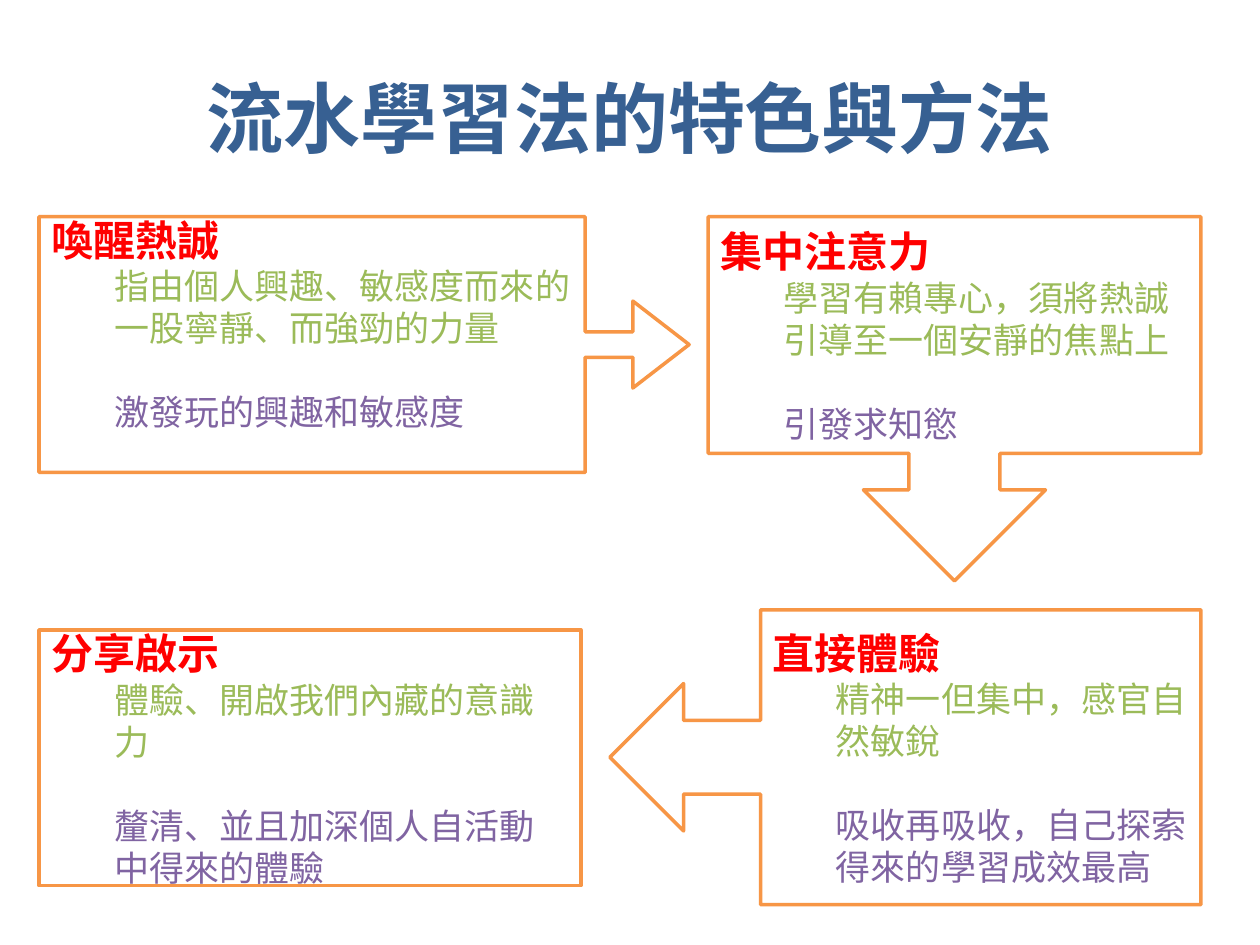
import pptx
import pptx.util
import pptx.dml.color
import pptx.enum.shapes
import pptx.enum.text
import pptx.oxml.ns
import lxml.etree

Inches = pptx.util.Inches
Pt = pptx.util.Pt
MSO = pptx.enum.shapes.MSO_SHAPE
PP_ALIGN = pptx.enum.text.PP_ALIGN
FONT = "Noto Sans CJK SC"
COLORS = {
    "title": "376092",
    "heading": "FF0000",
    "feature": "9BBB59",
    "method": "8064A2",
    "line": "F79646",
    "fill": "FFFFFF",
}


def rgb(name):
    return pptx.dml.color.RGBColor.from_string(COLORS[name])


def format_run(r, size, color, bold):
    r.font.size = Pt(size)
    r.font.bold = bold
    r.font.color.rgb = rgb(color)
    r.font.name = FONT
    ea = lxml.etree.SubElement(r.font._element, pptx.oxml.ns.qn("a:ea"))
    ea.set("typeface", FONT)


prs = pptx.Presentation()
prs.slide_width = Inches(10)
prs.slide_height = Inches(7.5)
s = prs.slides.add_slide(prs.slide_layouts[6])

sp = s.shapes.add_textbox(Inches(0.5), Inches(0.3), Inches(9), Inches(1.25))
tf = sp.text_frame
tf.word_wrap = True
tf.vertical_anchor = pptx.enum.text.MSO_ANCHOR.MIDDLE
tf.text = "流水學習法的特色與方法"
p = tf.paragraphs[0]
p.alignment = PP_ALIGN.CENTER
format_run(p.runs[0], 44, "title", True)

steps = [
    (MSO.RIGHT_ARROW_CALLOUT, (0.31, 1.72, 5.16, 2.03), (0.1, 0.17, 0.22, 0.84), 0.38,
     "喚醒熱誠", "指由個人興趣、敏感度而來的一股寧靜、而強勁的力量", "激發玩的興趣和敏感度"),
    (MSO.DOWN_ARROW_CALLOUT, (5.62, 1.72, 3.91, 2.89), (), 0.05,
     "集中注意力", "學習有賴專心，須將熱誠引導至一個安靜的焦點上", "引發求知慾"),
    (MSO.LEFT_ARROW_CALLOUT, (4.84, 4.84, 4.69, 2.34), (0.25, 0.25, 0.25, 0.745), 0.05,
     "直接體驗", "精神一但集中，感官自然敏銳", "吸收再吸收，自己探索得來的學習成效最高"),
    (MSO.RECTANGLE, (0.31, 5, 4.3, 2.03), (), 0.05,
     "分享啟示", "體驗、開啟我們內藏的意識力", "釐清、並且加深個人自活動中得來的體驗"),
]

for kind, box, adjustments, bottom, heading, feature, method in steps:
    sp = s.shapes.add_shape(kind, *[Inches(v) for v in box])
    for i, value in enumerate(adjustments):
        sp.adjustments[i] = value
    sp.shadow.inherit = False
    sp.fill.solid()
    sp.fill.fore_color.rgb = rgb("fill")
    sp.line.color.rgb = rgb("line")
    sp.line.width = Pt(2)
    tf = sp.text_frame
    tf.word_wrap = True
    tf.vertical_anchor = pptx.enum.text.MSO_ANCHOR.MIDDLE
    tf.margin_bottom = Inches(bottom)
    tf.text = "\n".join([heading, feature, method])
    for p, color in zip(tf.paragraphs, ["heading", "feature", "method"]):
        p.alignment = PP_ALIGN.LEFT
        is_heading = color == "heading"
        format_run(p.runs[0], 24 if is_heading else 20, color, is_heading)
        if not is_heading:
            p.level = 1
            pPr = p._p.get_or_add_pPr()
            pPr.set("marL", str(Inches(0.5)))
            pPr.set("indent", "0")
    tf.paragraphs[2].space_before = Pt(24)

prs.save("out.pptx")
